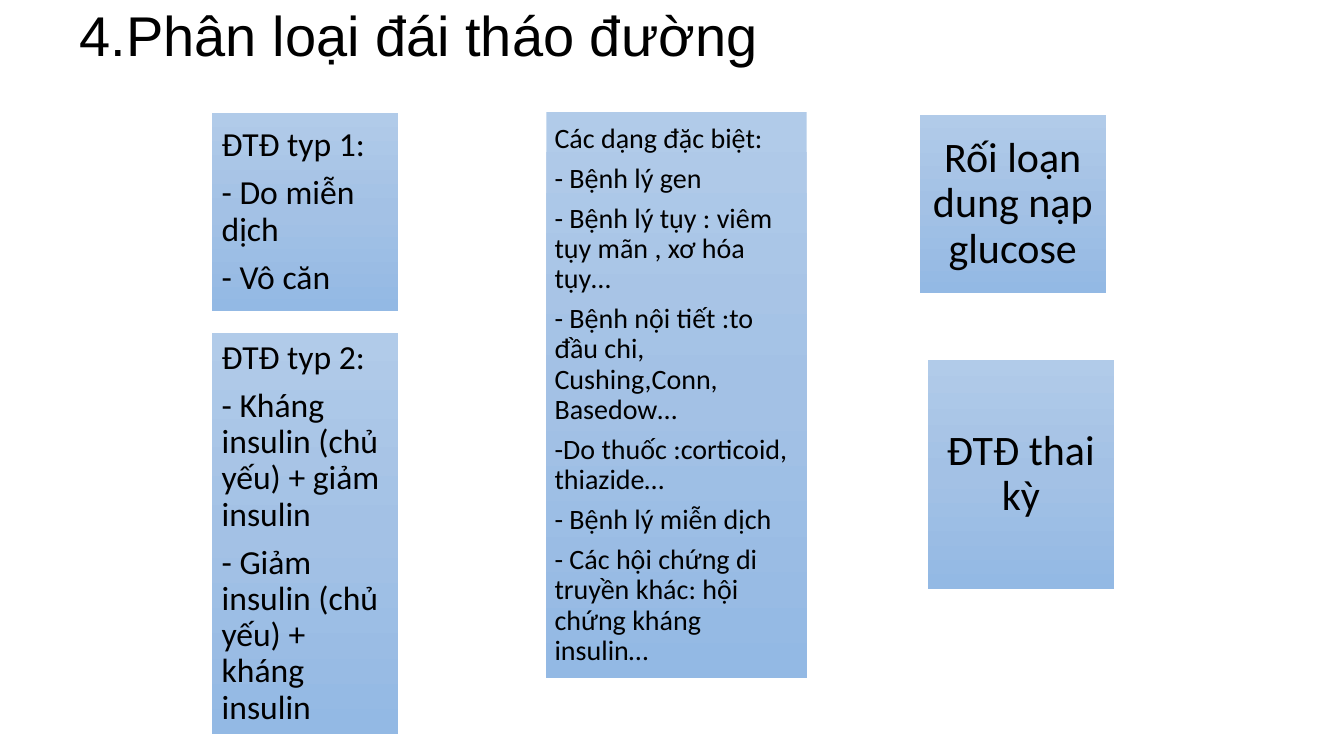
import copy

import pptx
import pptx.dml.color
import pptx.enum.shapes
import pptx.enum.text
import pptx.oxml.ns
import pptx.util

COLORS = {"text": "000000", "top": "B1CBE9", "middle": "A3C1E5", "bottom": "93B9E4"}
SLIDE_WIDTH, SLIDE_HEIGHT = 13.33, 7.5
TITLE = "4.Phân loại đái tháo đường"
TITLE_BOX = (0.69, -0.06, 11.5, 0.89)
NARROW, WIDE = 1.85, 2.58
COLUMNS = {"types": 2.1, "special": 5.42, "tolerance": 9.12, "pregnancy": 9.2}

CARDS = [
    {"column": "types", "top": 1.12, "width": NARROW, "height": 1.97, "size": 24,
     "lines": ["ĐTĐ typ 1:", "- Do miễn dịch", "- Vô căn"]},
    {"column": "types", "top": 3.3, "width": NARROW, "height": 3.98, "size": 24,
     "lines": ["ĐTĐ typ 2:",
               "- Kháng insulin (chủ yếu) + giảm insulin",
               "- Giảm insulin (chủ yếu) + kháng insulin"]},
    {"column": "special", "top": 1.11, "width": WIDE, "height": 5.62, "size": 20,
     "lines": ["Các dạng đặc biệt:",
               "- Bệnh lý gen",
               "- Bệnh lý tụy : viêm tụy mãn , xơ hóa tụy…",
               "- Bệnh nội tiết :to đầu chi, Cushing,Conn, Basedow…",
               "-Do thuốc :corticoid, thiazide…",
               "- Bệnh lý miễn dịch",
               "- Các hội chứng di truyền khác: hội chứng kháng insulin…"]},
    {"column": "tolerance", "top": 1.14, "width": NARROW, "height": 1.77, "size": 30,
     "lines": ["Rối loạn dung nạp glucose"]},
    {"column": "pregnancy", "top": 3.57, "width": NARROW, "height": 2.27, "size": 30,
     "lines": ["ĐTĐ thai kỳ"]},
]


def rgb(name):
    return pptx.dml.color.RGBColor.from_string(COLORS[name])


def write_text(frame, lines, size, font, centred=False, gap=0):
    align = pptx.enum.text.PP_ALIGN
    frame.word_wrap = True
    frame.auto_size = pptx.enum.text.MSO_AUTO_SIZE.NONE
    frame.vertical_anchor = pptx.enum.text.MSO_ANCHOR.MIDDLE
    for index, line in enumerate(lines):
        paragraph = frame.add_paragraph() if index else frame.paragraphs[0]
        paragraph.alignment = align.CENTER if centred else align.LEFT
        paragraph.line_spacing = 0.9
        paragraph.space_before = pptx.util.Pt(0)
        paragraph.space_after = pptx.util.Pt(gap)
        run = paragraph.add_run()
        run.text = line
        run.font.size = pptx.util.Pt(size)
        run.font.name = font
        run.font.color.rgb = rgb("text")


def fill_gradient(shape):
    shape.fill.gradient()
    shape.fill.gradient_angle = 270
    stop_list = shape.element.spPr.find(".//" + pptx.oxml.ns.qn("a:gsLst"))
    stop_list.insert(1, copy.deepcopy(stop_list[0]))
    for index, name in enumerate(("top", "middle", "bottom")):
        stop = shape.fill.gradient_stops[index]
        stop.position = index / 2
        stop.color.rgb = rgb(name)


def add_card(slide, card):
    box = (COLUMNS[card["column"]], card["top"], card["width"], card["height"])
    shape = slide.shapes.add_shape(
        pptx.enum.shapes.MSO_SHAPE.RECTANGLE, *map(pptx.util.Inches, box))
    shape.shadow.inherit = False
    shape.line.fill.background()
    fill_gradient(shape)
    frame = shape.text_frame
    inset = pptx.util.Inches(round(card["size"] * 0.004, 2))
    frame.margin_left = frame.margin_right = inset
    frame.margin_top = frame.margin_bottom = inset
    write_text(frame, card["lines"], card["size"], "Calibri",
               centred=len(card["lines"]) == 1, gap=card["size"] * 0.35)


def main():
    presentation = pptx.Presentation()
    presentation.slide_width = pptx.util.Inches(SLIDE_WIDTH)
    presentation.slide_height = pptx.util.Inches(SLIDE_HEIGHT)
    slide = presentation.slides.add_slide(presentation.slide_layouts[5])
    title = slide.shapes.title
    title.left, title.top, title.width, title.height = map(pptx.util.Inches, TITLE_BOX)
    write_text(title.text_frame, [TITLE], 40, "Arial")
    for card in CARDS:
        add_card(slide, card)
    presentation.save("out.pptx")


if __name__ == "__main__":
    main()
